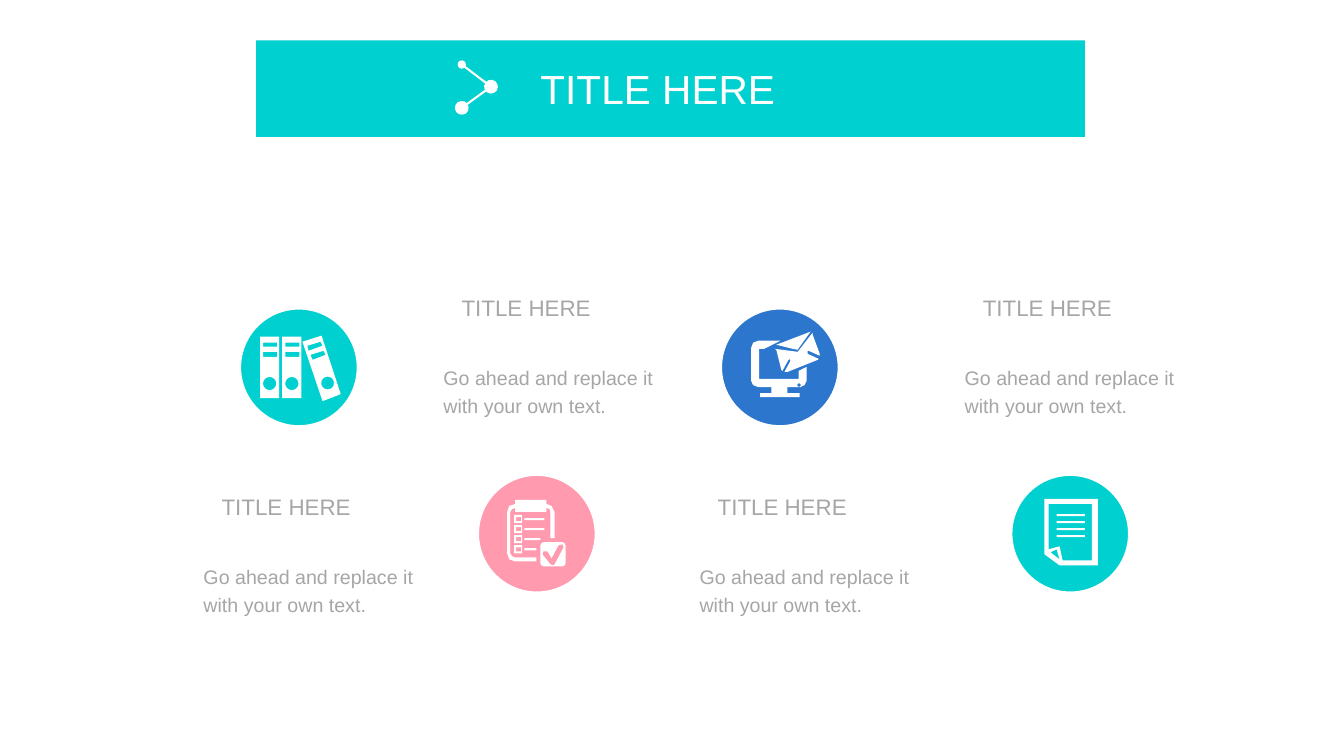
from dataclasses import dataclass
from math import cos, pi, sin

from lxml.etree import SubElement
from pptx import Presentation
from pptx.dml.color import RGBColor
from pptx.enum.shapes import MSO_CONNECTOR as Connector, MSO_SHAPE as Shape
from pptx.enum.text import MSO_ANCHOR as Anchor, MSO_AUTO_SIZE as AutoSize, PP_ALIGN as Align
from pptx.oxml.ns import qn
from pptx.slide import Slide
from pptx.text.text import TextFrame
from pptx.util import Pt

PX = 9144
FINE = 10
FONT = "Arial"
COLORS = {
    "teal": "00D0CF",
    "blue": "2C76CE",
    "pink": "FF9AAF",
    "white": "FFFFFF",
    "gray": "A6A6A6",
}
HEADING = "TITLE HERE"
DETAIL = "Go ahead and replace it with your own text."

Point = tuple[float, float]
Contour = list[Point]


@dataclass(frozen=True)
class Caption:
    left: int
    top: int


@dataclass(frozen=True)
class Badge:
    left: int
    top: int
    color: str
    icon: list[Contour]


@dataclass(frozen=True)
class Link:
    start: Point
    end: Point
    head: str | None
    tail: str


def color(name: str) -> RGBColor:
    return RGBColor.from_string(COLORS[name])


def rect(left: int, top: int, right: int, bottom: int) -> Contour:
    return [(left, top), (right, top), (right, bottom), (left, bottom)]


def disc(x: float, y: float, radius: float) -> Contour:
    angles = [2 * pi * step / 24 for step in range(24)]
    return [(x + radius * cos(angle), y + radius * sin(angle)) for angle in angles]


def binders_icon() -> list[Contour]:
    contours = [
        [(300, 339), (319, 333), (338, 391), (320, 398)],
        [(308, 352), (310, 357), (323, 352), (321, 348)],
        [(305, 343), (306, 348), (320, 343), (318, 339)],
        disc(325, 380, 6.3),
    ]
    for left in (258, 280):
        contours += [
            rect(left, 334, left + 19, 395),
            rect(left + 3, 340, left + 17, 344),
            rect(left + 3, 349, left + 17, 354),
            disc(left + 9.5, 380.5, 6.5),
        ]
    return contours


def checklist_icon() -> list[Contour]:
    contours = [
        [(511, 496), (542, 496), (542, 500), (547, 502), (550, 508), (550, 534),
         (546, 534), (546, 508), (545, 505), (542, 504), (542, 508), (511, 508),
         (511, 504), (508, 505), (506, 508), (506, 549), (508, 552), (511, 553),
         (532, 553), (532, 557), (511, 557), (505, 555), (503, 549), (503, 508),
         (505, 502), (511, 500)],
        [(539, 538), (558, 538), (560, 539), (561, 541), (561, 559), (560, 561),
         (558, 562), (539, 562), (537, 561), (536, 559), (536, 541), (537, 539)],
        [(538, 550), (546, 560), (549, 561), (550, 560), (559, 543), (558, 540),
         (554, 541), (547, 554), (543, 547), (539, 547)],
    ]
    for row, line_end in enumerate((540, 540, 536, 532)):
        top = 511 + 10 * row
        contours += [
            rect(510, top, 518, top + 8),
            rect(512, top + 2, 517, top + 6),
            rect(520, top + 3, line_end, top + 5),
        ]
    return contours


def mail_icon() -> list[Contour]:
    return [
        [(752, 338), (774, 338), (758, 346), (753, 346), (753, 376), (792, 376),
         (792, 368), (800, 364), (800, 378), (798, 382), (794, 384), (781, 384),
         (781, 390), (793, 390), (793, 394), (754, 394), (754, 390), (765, 390),
         (765, 384), (752, 384), (747, 382), (745, 378), (745, 345), (747, 340)],
        [(804, 329), (770, 342), (786, 346), (791, 347)],
        [(806, 330), (792, 348), (791, 349), (768, 346), (770, 347), (775, 367),
         (776, 368), (782, 357), (783, 356), (784, 358), (778, 369), (781, 369),
         (811, 357), (812, 356), (801, 351), (801, 348), (802, 348), (813, 353),
         (813, 351), (806, 332)],
        disc(792.5, 382, 1.7),
    ]


def document_icon() -> list[Contour]:
    lines = [rect(1048, top, 1076, top + 2) for top in (510, 517, 524, 531)]
    return [
        [(1036, 495), (1089, 495), (1089, 561), (1051, 561), (1036, 550)],
        [(1040, 545), (1051, 542), (1054, 556), (1083, 556), (1083, 500), (1040, 500)],
        [(1051, 555), (1048, 545), (1042, 548)],
        *lines,
    ]


def format_text(frame: TextFrame, text: str, size: int, ink: str, wrap: bool, spacing: float) -> None:
    frame.text = text
    frame.word_wrap = wrap
    frame.auto_size = AutoSize.SHAPE_TO_FIT_TEXT
    para = frame.paragraphs[0]
    para.alignment = Align.LEFT
    para.line_spacing = spacing
    for span in para.runs:
        span.font.name = FONT
        span.font.size = Pt(size)
        span.font.color.rgb = color(ink)


def draw_link(page: Slide, link: Link) -> None:
    ends = [round(value * PX) for value in (*link.start, *link.end)]
    line = page.shapes.add_connector(Connector.STRAIGHT, *ends)
    line.line.color.rgb = color("white")
    line.line.width = Pt(1.5)
    properties = line.element.spPr
    outline = properties.find(qn("a:ln"))
    for tag, size in (("a:headEnd", link.head), ("a:tailEnd", link.tail)):
        if size:
            SubElement(outline, qn(tag), type="oval", w=size, len=size)
    SubElement(properties, qn("a:effectLst"))


def draw_banner(page: Slide) -> None:
    banner = page.shapes.add_shape(Shape.RECTANGLE, 254 * PX, 40 * PX, 822 * PX, 96 * PX)
    banner.shadow.inherit = False
    banner.fill.solid()
    banner.fill.fore_color.rgb = color("teal")
    banner.line.fill.background()
    title = page.shapes.title
    title.left, title.top, title.width, title.height = 526 * PX, 58 * PX, 255 * PX, 59 * PX
    format_text(title.text_frame, HEADING, 29, "white", False, 1.0)
    title.text_frame.vertical_anchor = Anchor.TOP
    page.shapes.element.append(title.element)
    draw_link(page, Link((458, 64), (487, 86), "med", "lg"))
    draw_link(page, Link((487, 86), (458, 107), None, "lg"))


def draw_caption(page: Slide, caption: Caption) -> None:
    heading = page.shapes.add_textbox(caption.left * PX, caption.top * PX, 150 * PX, 42 * PX)
    format_text(heading.text_frame, HEADING, 16, "gray", False, 1.2)
    detail = page.shapes.add_textbox((caption.left - 18) * PX, (caption.top + 71) * PX, 234 * PX, 67 * PX)
    format_text(detail.text_frame, DETAIL, 14, "gray", True, 1.2)
    detail.text_frame.vertical_anchor = Anchor.MIDDLE


def draw_badge(page: Slide, badge: Badge) -> None:
    circle = page.shapes.add_shape(Shape.OVAL, badge.left * PX, badge.top * PX, 123 * PX, 123 * PX)
    circle.shadow.inherit = False
    circle.fill.solid()
    circle.fill.fore_color.rgb = color(badge.color)
    circle.line.color.rgb = color("white")
    circle.line.width = Pt(6)
    contours = [[(x * FINE, y * FINE) for x, y in contour] for contour in badge.icon]
    builder = page.shapes.build_freeform(*contours[0][0], scale=PX / FINE)
    for index, contour in enumerate(contours):
        if index:
            builder.move_to(*contour[0])
        builder.add_line_segments(contour[1:], close=True)
    icon = builder.convert_to_shape()
    icon.shadow.inherit = False
    icon.fill.solid()
    icon.fill.fore_color.rgb = color("white")
    icon.line.fill.background()


def main() -> None:
    deck = Presentation()
    deck.slide_width, deck.slide_height = 1333 * PX, 750 * PX
    page = deck.slides.add_slide(deck.slide_layouts[5])
    draw_banner(page)
    for caption in (Caption(210, 479), Caption(702, 479), Caption(448, 282), Caption(965, 282)):
        draw_caption(page, caption)
    for badge in (
        Badge(235, 303, "teal", binders_icon()),
        Badge(471, 468, "pink", checklist_icon()),
        Badge(712, 303, "blue", mail_icon()),
        Badge(1000, 468, "teal", document_icon()),
    ):
        draw_badge(page, badge)
    deck.save("out.pptx")


if __name__ == "__main__":
    main()
